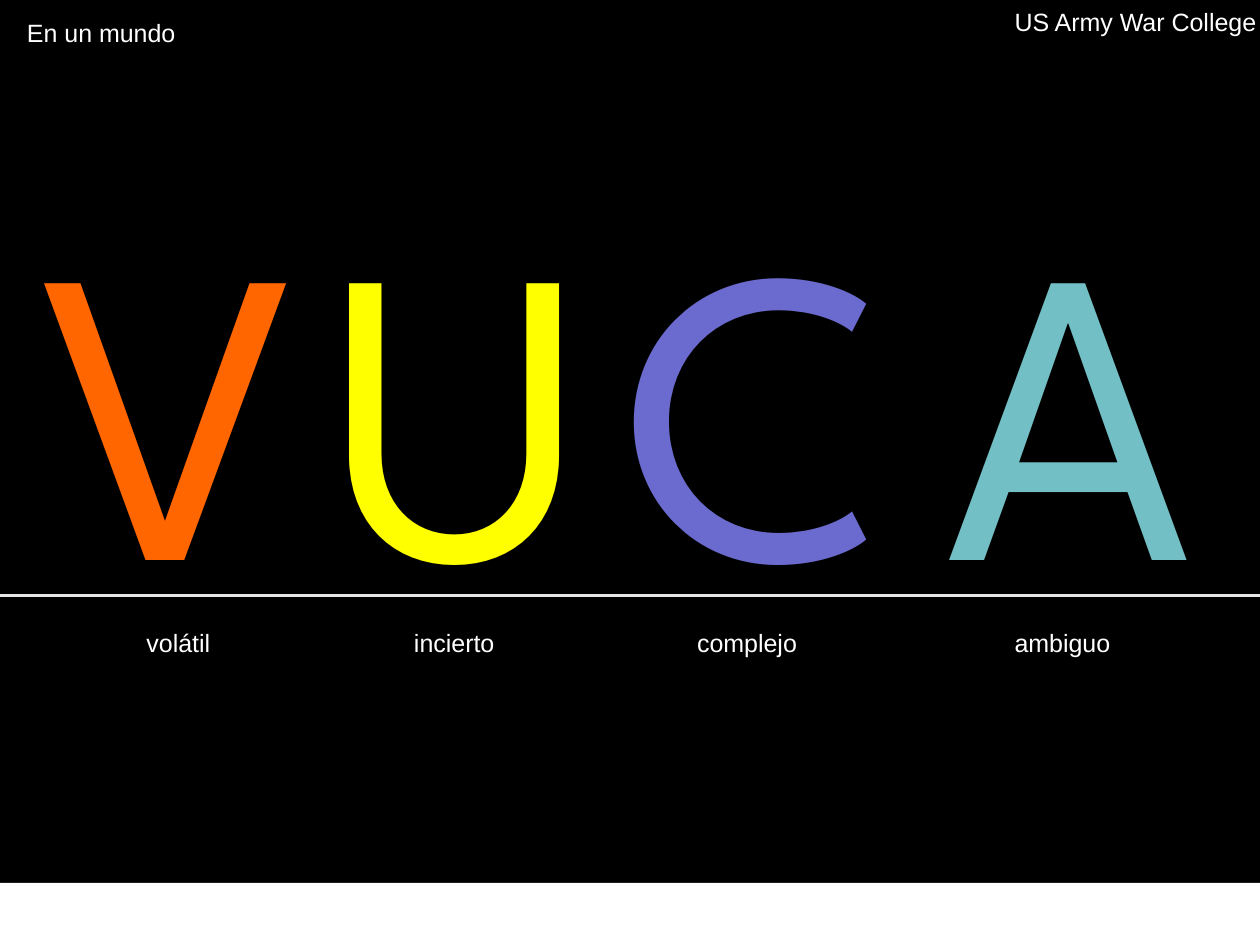
from pptx import Presentation
from pptx.dml.color import RGBColor
from pptx.enum.shapes import MSO_CONNECTOR, MSO_SHAPE
from pptx.enum.text import MSO_AUTO_SIZE
from pptx.oxml.ns import qn
from pptx.util import Emu, Pt
from lxml.etree import SubElement

PX = 9144
WIDE, HIGH = 1540, 1155
BLACK = RGBColor(0x00, 0x00, 0x00)
WHITE = RGBColor(0xFF, 0xFF, 0xFF)
GRAY = RGBColor(0xE6, 0xE6, 0xE6)
ORANGE = RGBColor(0xFF, 0x66, 0x00)
YELLOW = RGBColor(0xFF, 0xFF, 0x00)
VIOLET = RGBColor(0x6B, 0x6B, 0xCF)
TEAL = RGBColor(0x72, 0xBF, 0xC5)

LABEL = {"name": "Arial", "size": Pt(22)}
LETTER = {"name": "League Spartan", "size": Pt(369)}
FRAME = {
    "word_wrap": False,
    "auto_size": MSO_AUTO_SIZE.SHAPE_TO_FIT_TEXT,
    "margin_left": Emu(15 * PX),
    "margin_right": Emu(15 * PX),
    "margin_top": Emu(8 * PX),
    "margin_bottom": Emu(8 * PX),
}

COLUMNS = [
    ("V", 35, 387, ORANGE, "volátil", 164, 113),
    ("U", 386, 424, YELLOW, "incierto", 491, 134),
    ("C", 746, 414, VIOLET, "complejo", 837, 160),
    ("A", 1140, 403, TEAL, "ambiguo", 1225, 154),
]


def scale(*sizes):
    """Turn px into EMU."""
    return [Emu(size * PX) for size in sizes]


def apply(target, values):
    """Set each format value on the target."""
    for name, value in values.items():
        setattr(target, name, value)


def add_text(slide, text, box, style, color=WHITE):
    """Add one line of text in a box that does not wrap."""
    frame = slide.shapes.add_textbox(*scale(*box)).text_frame
    apply(frame, FRAME)
    run = frame.paragraphs[0].add_run()
    run.text = text
    apply(run.font, style)
    run.font.color.rgb = color


def add_rule(slide, top):
    """Add a line across the slide."""
    ends = scale(0, top, WIDE, top)
    rule = slide.shapes.add_connector(MSO_CONNECTOR.STRAIGHT, *ends)
    rule.line.color.rgb = GRAY
    rule.line.width = Pt(2.25)
    SubElement(rule._element.spPr, qn("a:effectLst"))


def add_band(slide, top):
    """Add a white band from the given height to the foot."""
    box = scale(0, top, WIDE, HIGH - top)
    band = slide.shapes.add_shape(MSO_SHAPE.RECTANGLE, *box)
    band.shadow.inherit = False
    band.fill.solid()
    band.fill.fore_color.rgb = WHITE
    band.line.fill.background()


def main():
    """Build the slide and save it."""
    deck = Presentation()
    deck.slide_width, deck.slide_height = scale(WIDE, HIGH)
    slide = deck.slides.add_slide(deck.slide_layouts[6])
    fill = slide.background.fill
    fill.solid()
    fill.fore_color.rgb = BLACK

    add_text(slide, "En un mundo", (18, 13, 216, 53), LABEL)
    for letter, left, width, color, word, start, span in COLUMNS:
        add_text(slide, letter, (left, 165, width, 637), LETTER, color)
        add_text(slide, word, (start, 759, span, 53), LABEL)
    add_rule(slide, 728)
    add_text(slide, "US Army War College", (1225, 0, 330, 53), LABEL)
    add_band(slide, 1079)
    deck.save("out.pptx")


if __name__ == "__main__":
    main()
